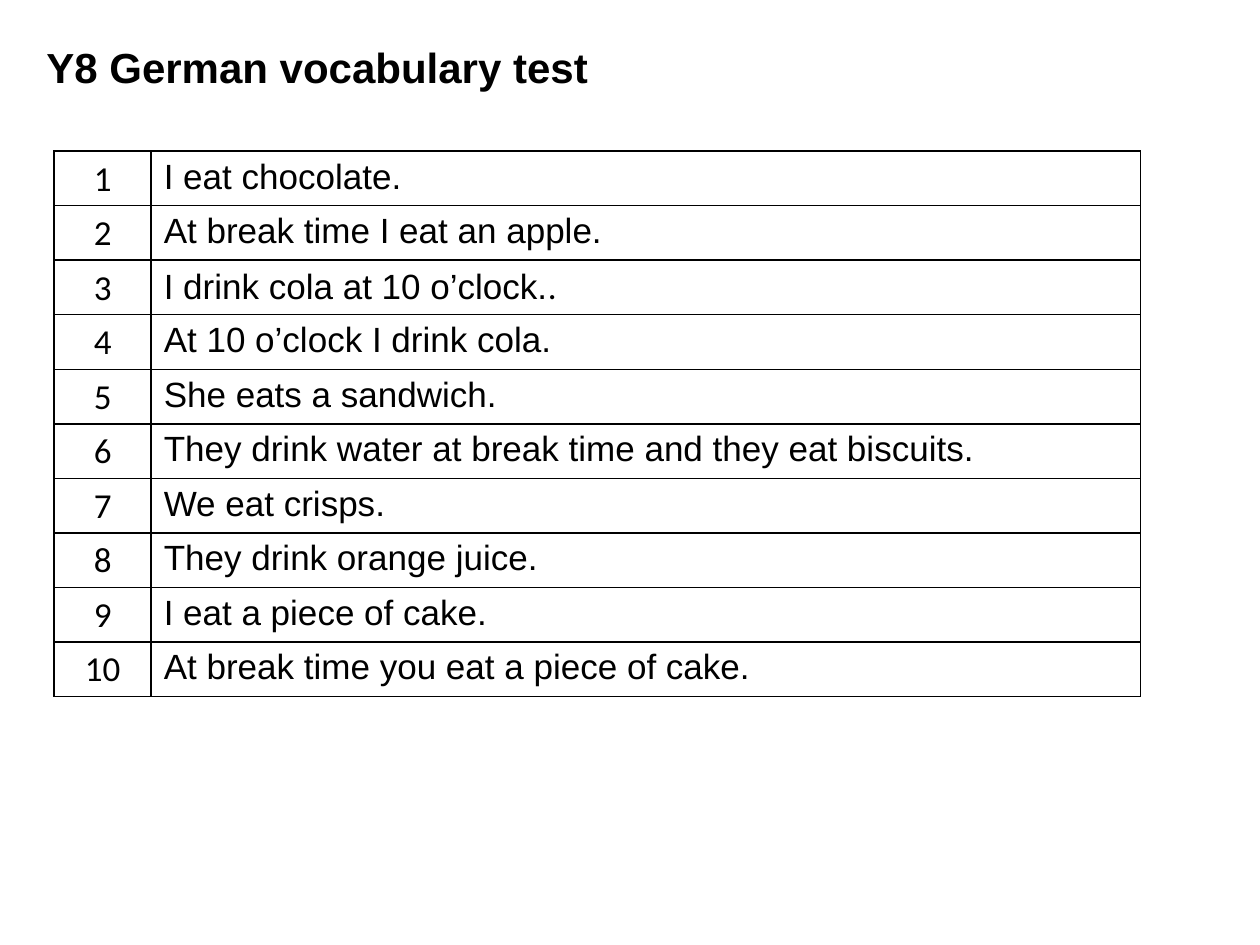
from pptx import Presentation
from pptx.dml.color import RGBColor
from pptx.enum.text import MSO_ANCHOR, PP_ALIGN
from pptx.oxml import parse_xml
from pptx.oxml.ns import nsdecls
from pptx.util import Inches, Pt

COLOURS = {"text": "000000", "border": "000000", "cell": "FFFFFF"}
SENTENCES = [
    ["I eat chocolate."],
    ["At break time I eat an apple."],
    ["I drink cola at 10 o’clock.", "."],
    ["At 10 o’clock I drink cola."],
    ["She eats a sandwich."],
    ["They drink water at break time and they eat biscuits."],
    ["We eat crisps."],
    ["They drink orange juice."],
    ["I eat a piece of cake."],
    ["At break time you eat a piece of cake."],
]
COLUMN_WIDTHS = (0.77, 7.85)
ROW_HEIGHT = 0.433


def format_span(span, font, size, bold=False):
    span.font.name = font
    span.font.size = Pt(size)
    span.font.bold = bold
    span.font.color.rgb = RGBColor.from_string(COLOURS["text"])


def add_title(page, text):
    box = page.shapes.add_textbox(Inches(0.27), Inches(0.28), Inches(5.2), Inches(0.51))
    box.text_frame.word_wrap = True
    box.text_frame.text = text
    format_span(box.text_frame.paragraphs[0].runs[0], "Arial", 24, bold=True)


def add_borders(cell):
    """Draw a thin line on all four sides, placed before the cell fill."""
    properties = cell._tc.get_or_add_tcPr()
    for position, side in enumerate(("lnL", "lnR", "lnT", "lnB")):
        properties.insert(position, parse_xml(
            f'<a:{side} {nsdecls("a")} w="{Pt(1)}"><a:solidFill>'
            f'<a:srgbClr val="{COLOURS["border"]}"/></a:solidFill></a:{side}>'))


def fill_cell(cell, texts, fonts):
    """Write each text as a run in the matching font."""
    cell.margin_top, cell.margin_bottom = Inches(0.05), Inches(0.04)
    cell.fill.solid()
    cell.fill.fore_color.rgb = RGBColor.from_string(COLOURS["cell"])
    add_borders(cell)
    para = cell.text_frame.paragraphs[0]
    for text, font in zip(texts, fonts):
        span = para.add_run()
        span.text = text
        format_span(span, font, 20)


def add_vocabulary_table(page):
    rows = len(SENTENCES)
    table = page.shapes.add_table(
        rows, 2, Inches(0.43), Inches(1.2),
        Inches(sum(COLUMN_WIDTHS)), Inches(ROW_HEIGHT * rows)).table
    table.first_row = table.horz_banding = False
    for column, width in zip(table.columns, COLUMN_WIDTHS):
        column.width = Inches(width)
    for index, texts in enumerate(SENTENCES):
        table.rows[index].height = Inches(ROW_HEIGHT)
        number = table.cell(index, 0)
        fill_cell(number, [str(index + 1)], ["Calibri"])
        number.vertical_anchor = MSO_ANCHOR.MIDDLE
        number.text_frame.paragraphs[0].alignment = PP_ALIGN.CENTER
        fill_cell(table.cell(index, 1), texts, ["Arial", "Calibri"])


def main():
    deck = Presentation()
    deck.slide_width, deck.slide_height = Inches(10), Inches(7.5)
    page = deck.slides.add_slide(deck.slide_layouts[6])
    add_title(page, "Y8 German vocabulary test")
    add_vocabulary_table(page)
    deck.save("out.pptx")


if __name__ == "__main__":
    main()
